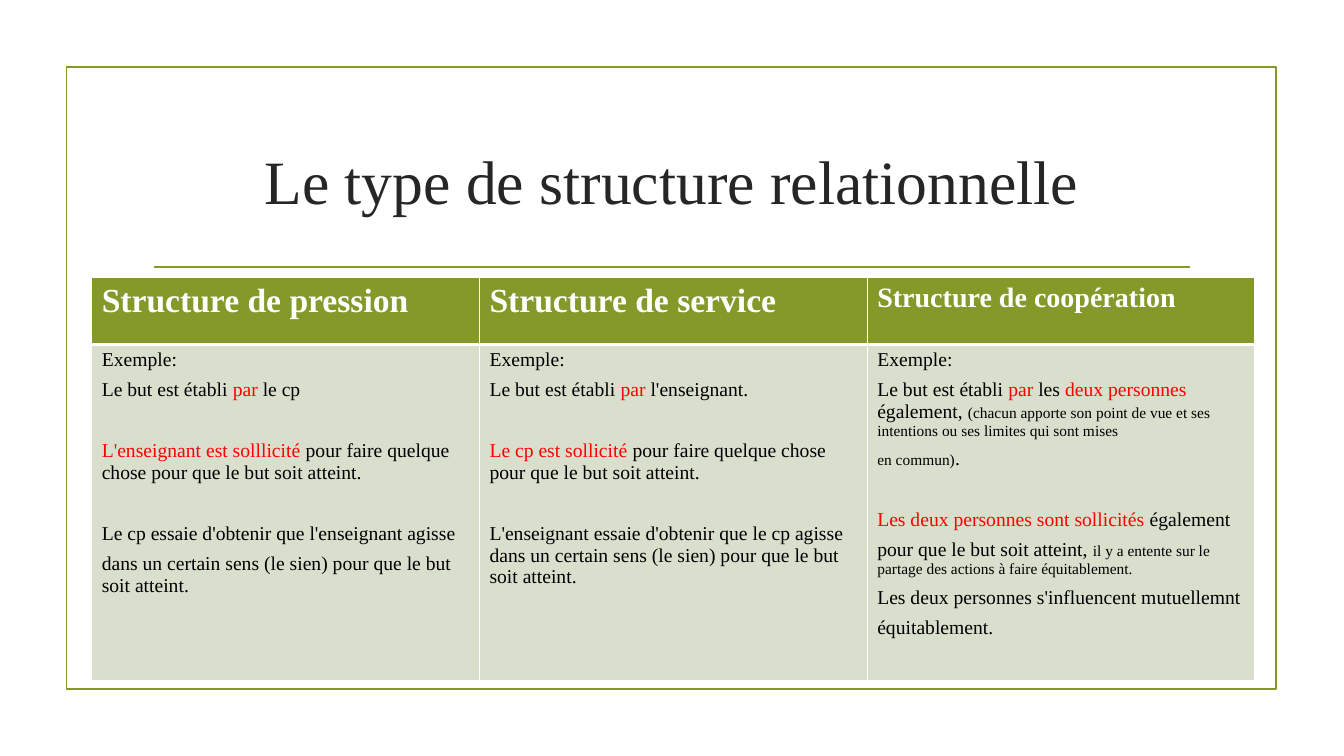
from lxml.etree import SubElement as Sub
from pptx import Presentation
from pptx.dml.color import RGBColor
from pptx.enum.shapes import MSO_CONNECTOR as Conn, MSO_SHAPE as Shape
from pptx.enum.text import MSO_ANCHOR as Anchor, PP_ALIGN as Align
from pptx.oxml.ns import qn
from pptx.util import Pt

GREEN, PALE, WHITE, BLACK = "83992A", "D9DECD", "FFFFFF", "000000"
RED = {"color": "FF0000"}
FINE = {"size": 11}
GAP = 22

HEADS = [("Structure de pression", 24), ("Structure de service", 24),
         ("Structure de coopération", 20)]
BODIES = [
    [(0, [("Exemple:", {})]),
     (0, [("Le but est établi ", {}), ("par", RED), (" le cp", {})]),
     (GAP, [("L'enseignant est solllicité ", RED),
            ("pour faire quelque chose pour que le but soit atteint.", {})]),
     (GAP, [("Le cp essaie d'obtenir que l'enseignant agisse ", {})]),
     (0, [("dans un certain sens (le sien) pour que le but soit atteint.", {})])],
    [(0, [("Exemple:", {})]),
     (0, [("Le but est établi ", {}), ("par ", RED), ("l'enseignant.", {})]),
     (GAP, [("Le cp est sollicité ", RED),
            ("pour faire quelque chose pour que le but soit atteint.", {})]),
     (GAP, [("L'enseignant essaie d'obtenir que le cp agisse dans un certain"
             " sens (le sien) pour que le but soit atteint.", {})])],
    [(0, [("Exemple:", {})]),
     (0, [("Le but est établi ", {}), ("par", RED), (" les ", {}),
          ("deux personnes ", RED), ("également, ", {}),
          ("(chacun apporte son point de vue et ses intentions ou ses"
           " limites qui sont mises ", FINE)]),
     (0, [("en commun)", FINE), (".", {})]),
     (GAP, [("Les deux personnes sont sollicités ", RED), ("également ", {})]),
     (0, [("pour que le but soit atteint, ", {}),
          ("il y a entente sur le partage des actions à faire équitablement.", FINE)]),
     (0, [("Les deux personnes s'influencent mutuellemnt ", {})]),
     (0, [("équitablement.", {})])],
]


def paint(tone):
    return RGBColor.from_string(tone)


def write(par, text, size=14, color=BLACK, bold=False):
    run = par.add_run()
    run.text = text
    font = run.font
    font.name, font.size, font.bold = "Times New Roman", Pt(size), bold
    font.color.rgb = paint(color)


def stroke(item):
    item.line.color.rgb = paint(GREEN)
    item.line.width = Pt(1.25)


def frame(slide, x, y, w, h):
    box = slide.shapes.add_shape(Shape.RECTANGLE, Pt(x), Pt(y), Pt(w), Pt(h))
    box.shadow.inherit = False
    box.fill.background()
    stroke(box)
    rule = slide.shapes.add_connector(
        Conn.STRAIGHT, Pt(x + 62.5), Pt(y + 142.5), Pt(x + w - 61.5), Pt(y + 142.5))
    stroke(rule)
    Sub(rule._element.spPr, qn("a:effectLst"))


def title(slide, x, y, w, h):
    head = slide.shapes.title
    head.left, head.top, head.width, head.height = Pt(x), Pt(y), Pt(w), Pt(h)
    area = head.text_frame
    area.vertical_anchor = Anchor.MIDDLE
    par = area.paragraphs[0]
    par.alignment = Align.CENTER
    write(par, "Le type de structure relationnelle", size=44, color="262626")


def edge(cell, base):
    props = cell._tc.get_or_add_tcPr()
    for side, width in zip("LRTB", (1, 1, 1, base)):
        line = Sub(props, qn("a:ln" + side), w=str(Pt(width)))
        Sub(Sub(line, qn("a:solidFill")), qn("a:srgbClr"), val=WHITE)


def dress(cell, tone, base):
    edge(cell, base)
    cell.fill.solid()
    cell.fill.fore_color.rgb = paint(tone)


def grid(slide, x, y, w, h):
    table = slide.shapes.add_table(2, 3, Pt(x), Pt(y), Pt(w), Pt(h)).table
    table.rows[0].height, table.rows[1].height = Pt(48), Pt(h - 48)
    for col, ((head, size), body) in enumerate(zip(HEADS, BODIES)):
        table.columns[col].width = Pt(w / 3)
        top, cell = table.cell(0, col), table.cell(1, col)
        dress(top, GREEN, 3)
        dress(cell, PALE, 1)
        write(top.text_frame.paragraphs[0], head, size=size, color=WHITE, bold=True)
        area = cell.text_frame
        for num, (gap, runs) in enumerate(body):
            par = area.add_paragraph() if num else area.paragraphs[0]
            par.space_before, par.space_after = Pt(gap), Pt(6)
            for text, form in runs:
                write(par, text, **form)


def main():
    deck = Presentation()
    deck.slide_width, deck.slide_height = Pt(960), Pt(540)
    slide = deck.slides.add_slide(deck.slide_layouts[5])
    frame(slide, 47.5, 48, 864, 444)
    title(slide, 102, 77, 756, 103)
    grid(slide, 65.5, 198, 831, 288.5)
    deck.save("out.pptx")


if __name__ == "__main__":
    main()
